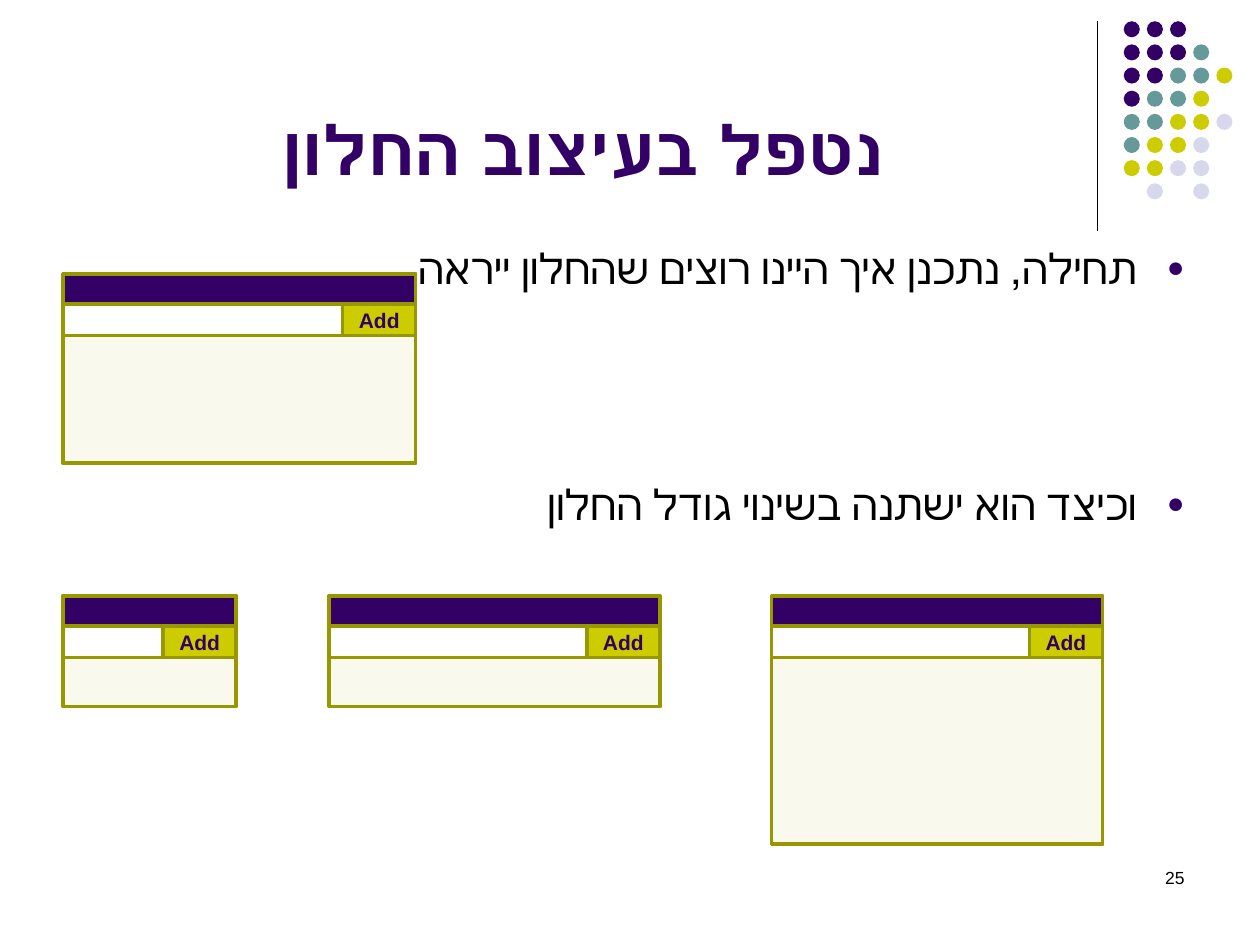
from pptx import Presentation
from pptx.dml.color import RGBColor
from pptx.enum.shapes import MSO_CONNECTOR, MSO_SHAPE
from pptx.enum.text import MSO_ANCHOR, PP_ALIGN
from pptx.util import Inches, Pt
from lxml import etree

RECT, OVAL = MSO_SHAPE.RECTANGLE, MSO_SHAPE.OVAL
LINE = MSO_CONNECTOR.STRAIGHT
TOP, MID, BOTTOM = MSO_ANCHOR.TOP, MSO_ANCHOR.MIDDLE, MSO_ANCHOR.BOTTOM
CENTER, RIGHT = PP_ALIGN.CENTER, PP_ALIGN.RIGHT
NS = "http://schemas.openxmlformats.org/drawingml/2006/main"

COLS, ROWS = 80, 60  # slide grid, eight cells to the inch
PURPLE, TEAL, LIME, PALE = "330066", "669999", "CCCC00", "D8D8EC"
OLIVE, CREAM, WHITE, BLACK = "979700", "F9F9EE", "FFFFFF", "000000"

deck = Presentation()
deck.slide_width, deck.slide_height = Inches(10), Inches(7.5)
slide = deck.slides.add_slide(deck.slide_layouts[6])


def color(code):
    return RGBColor.from_string(code)


def place(x, y, w, h):
    """Turn grid columns and rows into slide lengths."""
    col, row = deck.slide_width / COLS, deck.slide_height / ROWS
    return int(x * col), int(y * row), int(w * col), int(h * row)


def add_tag(node, tag, **attrs):
    return etree.SubElement(node, f"{{{NS}}}{tag}", **attrs)


def add_shape(kind, box, fill, edge=None):
    shape = slide.shapes.add_shape(kind, *place(*box))
    shape.shadow.inherit = False
    shape.fill.solid()
    shape.fill.fore_color.rgb = color(fill)
    if edge:
        shape.line.color.rgb = color(edge)
        shape.line.width = Pt(2)
    else:
        shape.line.fill.background()


def add_text(box, lines, size, ink, align, anchor=TOP, bold=False):
    frame = slide.shapes.add_textbox(*place(*box)).text_frame
    frame.word_wrap = True
    frame.vertical_anchor = anchor
    frame.text = "\n".join(lines)
    for para in frame.paragraphs:
        para.alignment = align
        para.font.name, para.font.size = "Arial", Pt(size)
        para.font.bold = bold
        para.font.color.rgb = color(ink)
    return frame.paragraphs


def set_rtl(para):
    props = para._p.get_or_add_pPr()
    props.set("rtl", "1")
    return props


def draw_dots(x, y, pitch, size):
    """Corner pattern: one letter per dot."""
    inks = {"P": PURPLE, "T": TEAL, "L": LIME, "W": PALE}
    rows = ["PPP", "PPPT", "PPTTL", "PTTL", "TTLLW", "TLLW", "LLWW", ".W.W"]
    for r, row in enumerate(rows):
        for c, key in enumerate(row):
            if key in inks:
                box = x + c * pitch, y + r * pitch, size, size
                add_shape(OVAL, box, inks[key])


def draw_rule(x, y, h):
    left, top, _, tall = place(x, y, 0, h)
    rule = slide.shapes.add_connector(LINE, left, top, left, top + tall)
    rule.line.color.rgb = color(BLACK)
    rule.line.width = Pt(0.75)
    add_tag(rule._element.spPr, "effectLst")


def draw_title(box, words):
    set_rtl(add_text(box, [words], 39, PURPLE, CENTER, BOTTOM, True)[0])


def draw_points(box, lines, gaps):
    for para, gap in zip(add_text(box, lines, 24, BLACK, RIGHT), gaps):
        para.space_before = Pt(gap)
        props = set_rtl(para)
        props.set("marL", str(Inches(0.38)))
        props.set("indent", str(-Inches(0.38)))
        # Bullet tags go before the default run font
        font = props.find(f"{{{NS}}}defRPr")
        tint = add_tag(props, "buClr")
        add_tag(tint, "srgbClr", val=PURPLE)
        add_tag(props, "buSzPct", val="70000")
        add_tag(props, "buFont", typeface="Arial")
        add_tag(props, "buChar", char="●")
        if font is not None:
            props.append(font)


def draw_window(x, y, w, h):
    """Sketch of a window: title bar, entry field, Add button, list."""
    bar, field, button = 1.9, 2, 4.64
    top = bar + field
    add_shape(RECT, (x, y, w, h), LIME, OLIVE)
    add_shape(RECT, (x, y, w, bar), PURPLE, OLIVE)
    add_shape(RECT, (x, y + bar, w - button, field), WHITE, OLIVE)
    add_shape(RECT, (x, y + top, w, h - top), CREAM, OLIVE)
    label = x + w - button, y + bar - 0.2, button, field + 0.4
    add_text(label, ["Add"], 12, PURPLE, CENTER, MID, True)


# Corner decoration
draw_rule(69.67, 1.33, 13.33)
draw_dots(71.35, 1.35, 1.47, 1.02)

# Wording
draw_title((4, 1, 66, 11.4), "נטפל בעיצוב החלון")
draw_points(
    (6, 15, 70, 38.6),
    ["תחילה, נתכנן איך היינו רוצים שהחלון ייראה",
     "וכיצד הוא ישתנה בשינוי גודל החלון"],
    [4.8, 106])
add_text((57.33, 54.67, 18.67, 4), ["25"], 10, BLACK, RIGHT)

# Planned window, then its resized forms
draw_window(4, 17.4, 22.4, 12)
for x, w, h in [(4, 11, 7), (20.9, 21, 7), (49, 21, 15.75)]:
    draw_window(x, 37.85, w, h)

deck.save("out.pptx")
